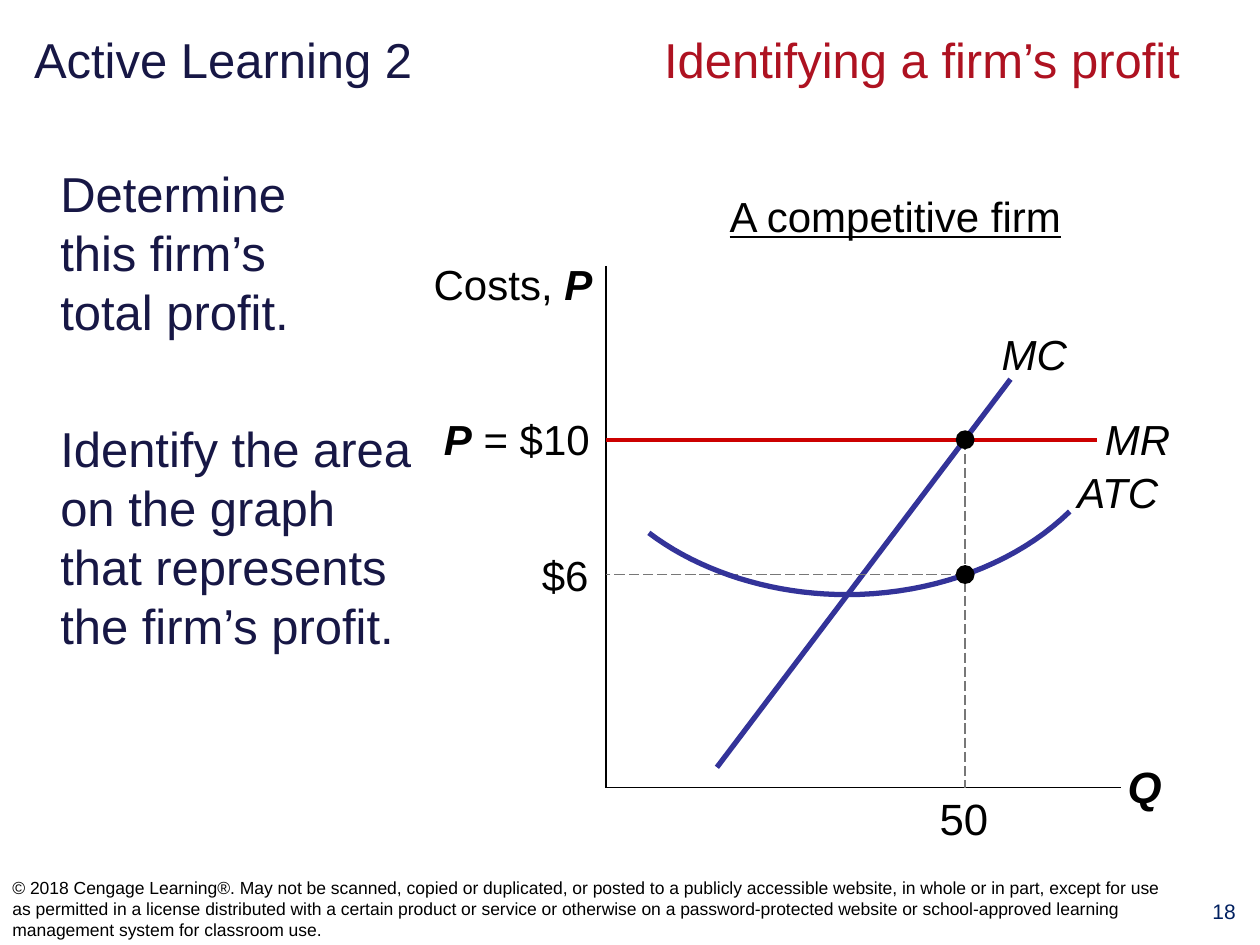
from lxml import etree
from pptx import Presentation
from pptx.dml.color import RGBColor
from pptx.enum.dml import MSO_LINE
from pptx.enum.shapes import MSO_CONNECTOR, MSO_SHAPE
from pptx.enum.text import MSO_ANCHOR, PP_ALIGN
from pptx.oxml.ns import qn
from pptx.util import Inches, Pt

LEFT, MID, RIGHT = PP_ALIGN.LEFT, PP_ALIGN.CENTER, PP_ALIGN.RIGHT
TOP, CENTER = MSO_ANCHOR.TOP, MSO_ANCHOR.MIDDLE
DASH = MSO_LINE.LONG_DASH
NAVY, RED, BLACK, BLUE, GRAY = "171745", "AE1221", "000000", "333399", "777777"

# Content: a run is its text, then any change of format
TITLE = [("Active Learning 2\t", {}), ("Identifying a firm’s profit", {"color": RED})]
TASKS = [
    [("Determine \vthis firm’s \vtotal profit.", {})],
    [("Identify the area on the graph that represents \vthe firm’s profit.", {})],
]
LEGAL = (
    "© 2018 Cengage Learning®. May not be scanned, copied or duplicated, or posted "
    "to a publicly accessible website, in whole or in part, except for use as "
    "permitted in a license distributed with a certain product or service or "
    "otherwise on a password-protected website or school-approved learning "
    "management system for classroom use."
)
VAR = {"bold": True, "italic": True}
SLANT = {"italic": True}

# Graph positions in inches
X0, Y0 = 4.81, 6.25                 # origin
QTY, PRICE, COST = 7.66, 3.49, 4.56
DOT = 0.15
LINES = [                           # from, to, colour, width, dash
    ((X0, 2.11), (X0, Y0), BLACK, 0.75, None),
    ((X0, Y0), (8.9, Y0), BLACK, 0.75, None),
    ((5.69, 6.09), (8.02, 3.01), BLUE, 3, None),
    ((X0, PRICE), (8.71, PRICE), "CC0000", 2.25, None),
    ((QTY, PRICE), (QTY, Y0), GRAY, 0.75, DASH),
    ((QTY, COST), (X0, COST), GRAY, 0.75, DASH),
]
ATC = [                             # cubic curves: start, two controls, end
    ((8.49, 4.06), (8.07, 4.47), (7.42, 4.72), (6.72, 4.72)),
    ((6.72, 4.72), (6.13, 4.72), (5.56, 4.54), (5.15, 4.23)),
]
STEPS = 20
LABELS = [                          # box, runs, format
    ((8.85, 5.98, 0.59, 0.52), [("Q", VAR)], {"size": 25}),
    ((2.97, 2, 1.83, 0.5), [("Costs, ", {}), ("P", VAR)], {"align": RIGHT}),
    ((3.31, 3.23, 1.47, 0.5), [("P", VAR), (" = $10", {})], {"align": RIGHT}),
    ((7.95, 2.61, 0.66, 0.4), [("MC", SLANT)], {"inset": 0}),
    ((8.55, 3.7, 0.81, 0.4), [("ATC", SLANT)], {"inset": 0}),
    ((8.77, 3.28, 0.66, 0.4), [("MR", SLANT)], {"inset": 0}),
    ((7.42, 6.28, 0.46, 0.42), [("50", {})], {"size": 25, "align": MID, "inset": 0}),
    ((4.15, 4.36, 0.52, 0.4), [("$6", {})], {"align": RIGHT, "inset": 0}),
    ((5.39, 1.44, 3.43, 0.53), [("A competitive firm", {"underline": True})],
     {"align": MID, "pitch": 1.05}),
]

prs = Presentation()
prs.slide_width, prs.slide_height = Inches(10), Inches(7.5)
slide = prs.slides.add_slide(prs.slide_layouts[5])
shapes = slide.shapes


def rgb(code):
    return RGBColor.from_string(code)


def write(box, paras, shape=None, size=24, color=BLACK, align=LEFT, anchor=TOP,
          inset=None, pitch=1, gap=0, tab=None):
    """Fill a text box, or the given shape, with paragraphs of runs."""
    at = [Inches(v) for v in box]
    if shape is None:
        shape = shapes.add_textbox(*at)
    else:
        shape.left, shape.top, shape.width, shape.height = at
    frame = shape.text_frame
    frame.word_wrap, frame.vertical_anchor = True, anchor
    if inset is not None:
        frame.margin_left = frame.margin_right = Inches(inset)
        frame.margin_top = frame.margin_bottom = Inches(inset)
    for i, runs in enumerate(paras):
        para = frame.add_paragraph() if i else frame.paragraphs[0]
        para.alignment, para.line_spacing = align, pitch
        para.space_before = Pt(gap if i else 0)
        if tab:
            stops = etree.SubElement(para._p.get_or_add_pPr(), qn("a:tabLst"))
            etree.SubElement(stops, qn("a:tab"), pos=str(Inches(tab)), algn="l")
        for words, style in runs:
            for j, part in enumerate(words.split("\v")):
                if j:
                    para.add_line_break()
                run = para.add_run()
                run.text = part
                font = run.font
                font.name, font.size = "Arial", Pt(size)
                font.color.rgb = rgb(style.get("color", color))
                font.bold = style.get("bold", False)
                font.italic = style.get("italic", False)
                font.underline = style.get("underline", False)


def draw(start, end, color, width, dash):
    line = shapes.add_connector(
        MSO_CONNECTOR.STRAIGHT, *[Inches(v) for v in start + end])
    line.line.color.rgb, line.line.width = rgb(color), Pt(width)
    if dash:
        line.line.dash_style = dash
    etree.SubElement(line._element.spPr, qn("a:effectLst"))


def bend(curve, t):
    """Point on a cubic curve at t."""
    s = 1 - t
    parts = (s ** 3, 3 * s * s * t, 3 * s * t * t, t ** 3)
    return tuple(Inches(sum(w * p[k] for w, p in zip(parts, curve)))
                 for k in (0, 1))


# Title and tasks
write((0.17, 0.11, 9.67, 0.72), [TITLE], shapes.title, size=28, color=NAVY,
      anchor=CENTER, tab=5)
write((0.38, 1.25, 3.12, 5.8), TASKS, size=28, color=NAVY, gap=45)

# Axes, straight curves and guides
for line in LINES:
    draw(*line)

# Average total cost curve
dots = [bend(c, n / STEPS) for c in ATC for n in range(1, STEPS + 1)]
pen = shapes.build_freeform(*bend(ATC[0], 0))
pen.add_line_segments(dots, close=False)
curve = pen.convert_to_shape()
curve.shadow.inherit = False
curve.fill.background()
curve.line.color.rgb, curve.line.width = rgb(BLUE), Pt(3)

# Points at the chosen quantity
for y in (PRICE, COST):
    dot = shapes.add_shape(MSO_SHAPE.OVAL, Inches(QTY - DOT / 2),
                           Inches(y - DOT / 2), Inches(DOT), Inches(DOT))
    dot.shadow.inherit = False
    dot.fill.solid()
    dot.fill.fore_color.rgb = rgb(BLACK)
    dot.line.fill.background()

# Graph labels
for box, runs, style in LABELS:
    write(box, [runs], **style)

# Footer
write((0, 6.92, 9.41, 0.58), [[(LEGAL, {})]], size=10, anchor=CENTER)
write((9.43, 7.08, 0.57, 0.41), [[("18", {})]], size=12, color="002060", align=MID)

prs.save("out.pptx")
